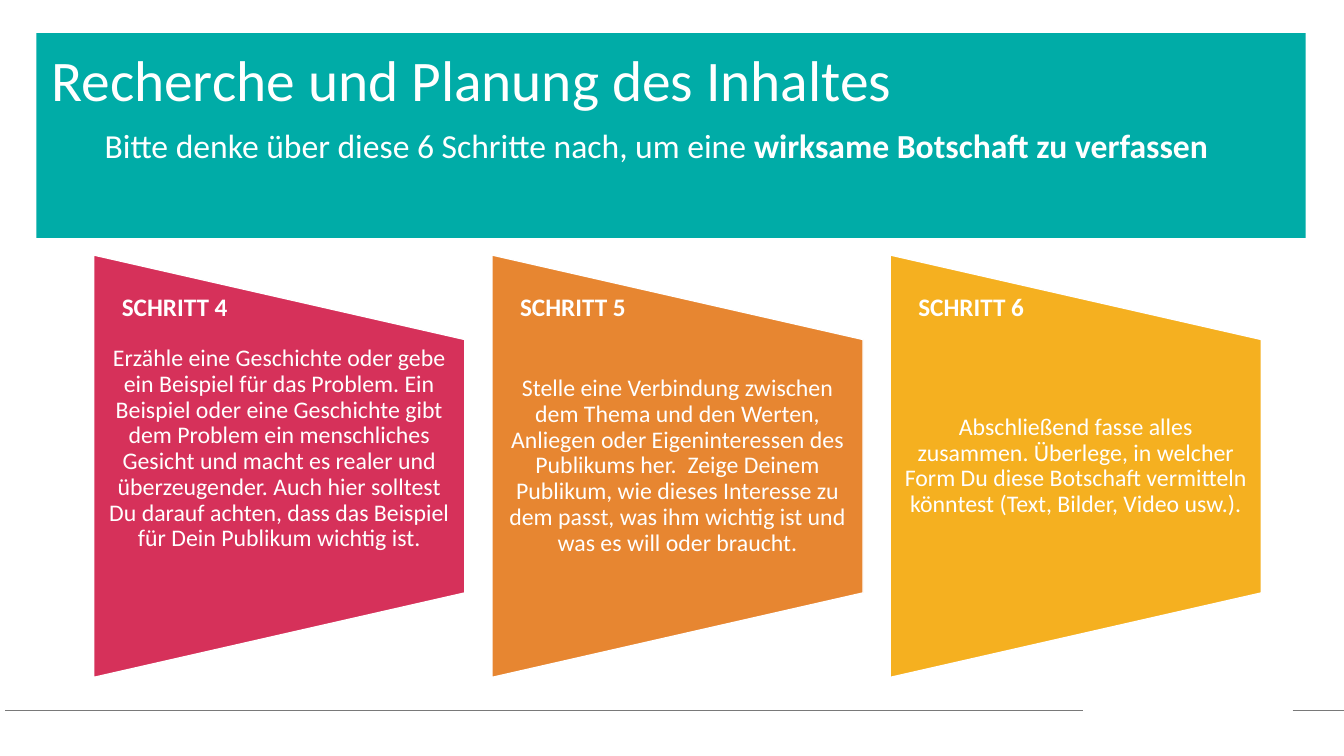
import pptx
import pptx.util
import pptx.dml.color
import pptx.enum.shapes
import pptx.enum.text
import pptx.oxml.ns
import lxml.etree

Inches, Pt = pptx.util.Inches, pptx.util.Pt
SHAPE = pptx.enum.shapes.MSO_SHAPE
ALIGN = pptx.enum.text.PP_ALIGN
ANCHOR = pptx.enum.text.MSO_ANCHOR
qn = pptx.oxml.ns.qn

THEME = {
    "font": "Calibri",
    "title": 41, "subtitle": 24, "label": 18, "text": 17,
    "white": "FFFFFF", "band": "00ACA7", "rule": "797979",
    "steps": ["D6315A", "E78631", "F5B020"],
}
STEPS = [
    ("SCHRITT 4", "Erzähle eine Geschichte oder gebe ein Beispiel für das Problem. Ein Beispiel oder eine Geschichte gibt dem Problem ein menschliches Gesicht und macht es realer und überzeugender. Auch hier solltest Du darauf achten, dass das Beispiel für Dein Publikum wichtig ist.", 0.34),
    ("SCHRITT 5", "Stelle eine Verbindung zwischen dem Thema und den Werten, Anliegen oder Eigeninteressen des Publikums her.  Zeige Deinem Publikum, wie dieses Interesse zu dem passt, was ihm wichtig ist und was es will oder braucht.", 0),
    ("SCHRITT 6", "Abschließend fasse alles zusammen. Überlege, in welcher Form Du diese Botschaft vermitteln könntest (Text, Bilder, Video usw.).", 0),
]
LEFT, PITCH, COL_W = 0.93, 3.95, 3.68
ROW_TOP, ROW_H = 2.53, 4.19


def rgb(name):
    return pptx.dml.color.RGBColor.from_string(name)


def add_run(p, text, size, bold=False):
    r = p.add_run()
    r.text = text
    r.font.name = THEME["font"]
    r.font.size = Pt(size)
    r.font.bold = bold
    r.font.color.rgb = rgb(THEME["white"])


prs = pptx.Presentation()
prs.slide_width, prs.slide_height = Inches(13.33), Inches(7.5)
s = prs.slides.add_slide(prs.slide_layouts[1])
title, body = s.placeholders[0], s.placeholders[1]

band = s.shapes.add_shape(SHAPE.RECTANGLE, Inches(0.36), Inches(0.33), Inches(12.59), Inches(2.03))
band.shadow.inherit = False
band.fill.solid()
band.fill.fore_color.rgb = rgb(THEME["band"])
band.line.fill.background()
title._element.addprevious(band._element)

for sp, top, height, align in [(title, 0.47, 0.74, ALIGN.LEFT), (body, 1.23, 0.71, ALIGN.CENTER)]:
    sp.left, sp.top, sp.width, sp.height = Inches(0.41), Inches(top), Inches(12.2), Inches(height)
    tf = sp.text_frame
    tf.auto_size = pptx.enum.text.MSO_AUTO_SIZE.NONE
    tf.vertical_anchor = ANCHOR.TOP
    p = tf.paragraphs[0]
    p.alignment, p.line_spacing, p.space_before = align, 0.9, Pt(0)

add_run(title.text_frame.paragraphs[0], "Recherche und Planung des Inhaltes", THEME["title"])
p = body.text_frame.paragraphs[0]
add_run(p, "Bitte denke über diese 6 Schritte nach, um eine ", THEME["subtitle"])
add_run(p, "wirksame Botschaft zu verfassen", THEME["subtitle"], True)
pPr = p._p.get_or_add_pPr()
pPr.set("marL", "0")
pPr.set("indent", "0")
lxml.etree.SubElement(pPr, qn("a:buNone"))

for x1, x2 in [(0.05, 10.74), (12.82, 13.33)]:
    rule = s.shapes.add_connector(
        pptx.enum.shapes.MSO_CONNECTOR.STRAIGHT, Inches(x1), Inches(7.05), Inches(x2), Inches(7.05))
    rule.line.color.rgb = rgb(THEME["rule"])
    rule.line.width = Pt(0.5)
    lxml.etree.SubElement(rule._element.spPr, qn("a:effectLst"))

for i, (label, text, bottom) in enumerate(STEPS):
    x = LEFT + i * PITCH
    panel = s.shapes.add_shape(
        SHAPE.FLOWCHART_MANUAL_OPERATION,
        Inches(x + (COL_W - ROW_H) / 2), Inches(ROW_TOP + (ROW_H - COL_W) / 2),
        Inches(ROW_H), Inches(COL_W))
    panel.rotation = 270
    panel.shadow.inherit = False
    panel.fill.solid()
    panel.fill.fore_color.rgb = rgb(THEME["steps"][i])
    panel.line.color.rgb = rgb(THEME["white"])
    panel.line.width = Pt(1)

    tf = s.shapes.add_textbox(
        Inches(x), Inches(ROW_TOP + ROW_H / 5), Inches(COL_W), Inches(ROW_H * 3 / 5)).text_frame
    tf.word_wrap = True
    tf.vertical_anchor = ANCHOR.MIDDLE
    tf.margin_left = tf.margin_right = Inches(0.12)
    tf.margin_top, tf.margin_bottom = 0, Inches(bottom)
    p = tf.paragraphs[0]
    p.alignment, p.line_spacing = ALIGN.CENTER, 0.9
    add_run(p, text, THEME["text"])

    tf = s.shapes.add_textbox(Inches(x + 0.18), Inches(2.84), Inches(1.26), Inches(0.4)).text_frame
    tf.word_wrap = False
    add_run(tf.paragraphs[0], label, THEME["label"], True)

prs.save("out.pptx")
